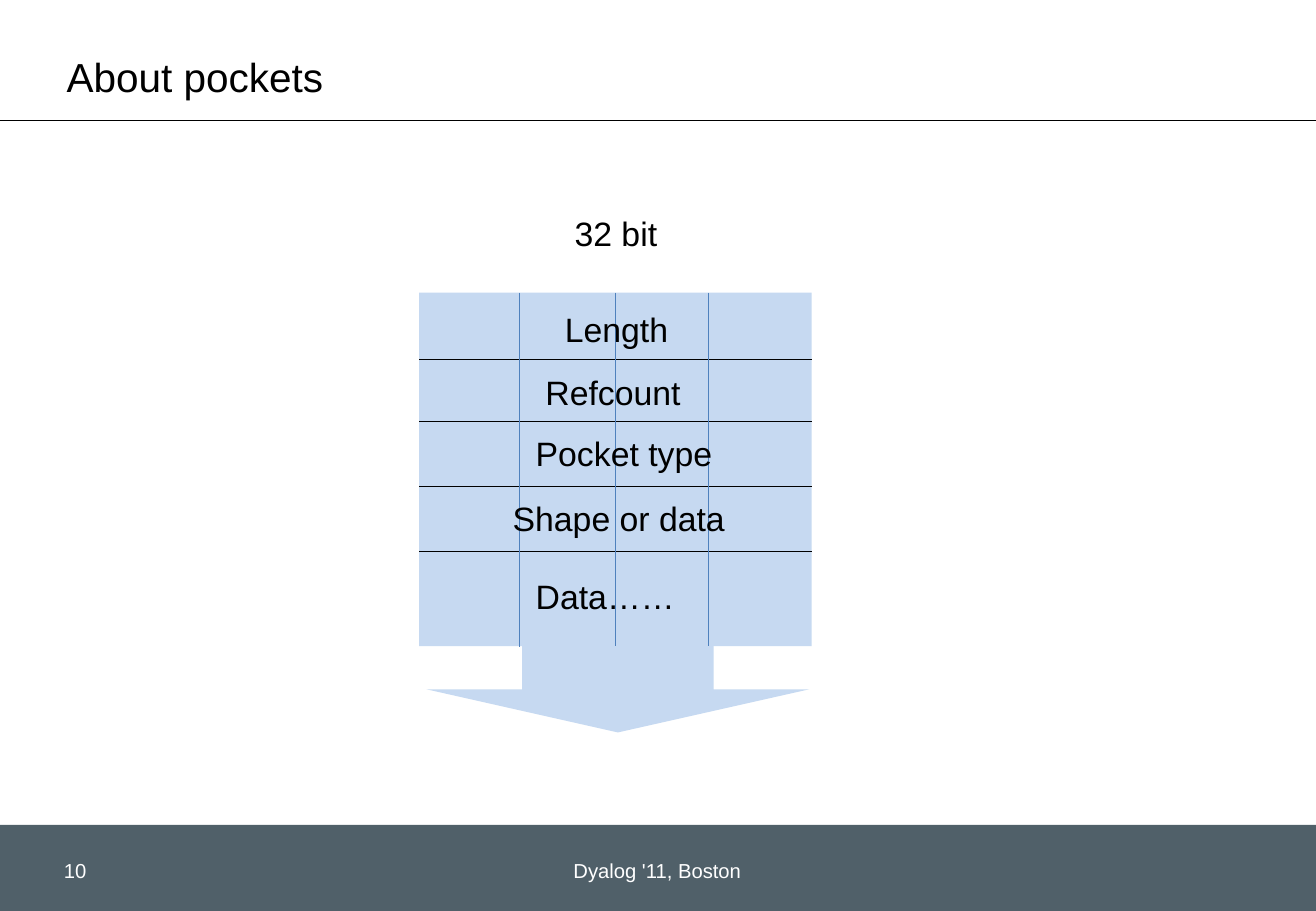
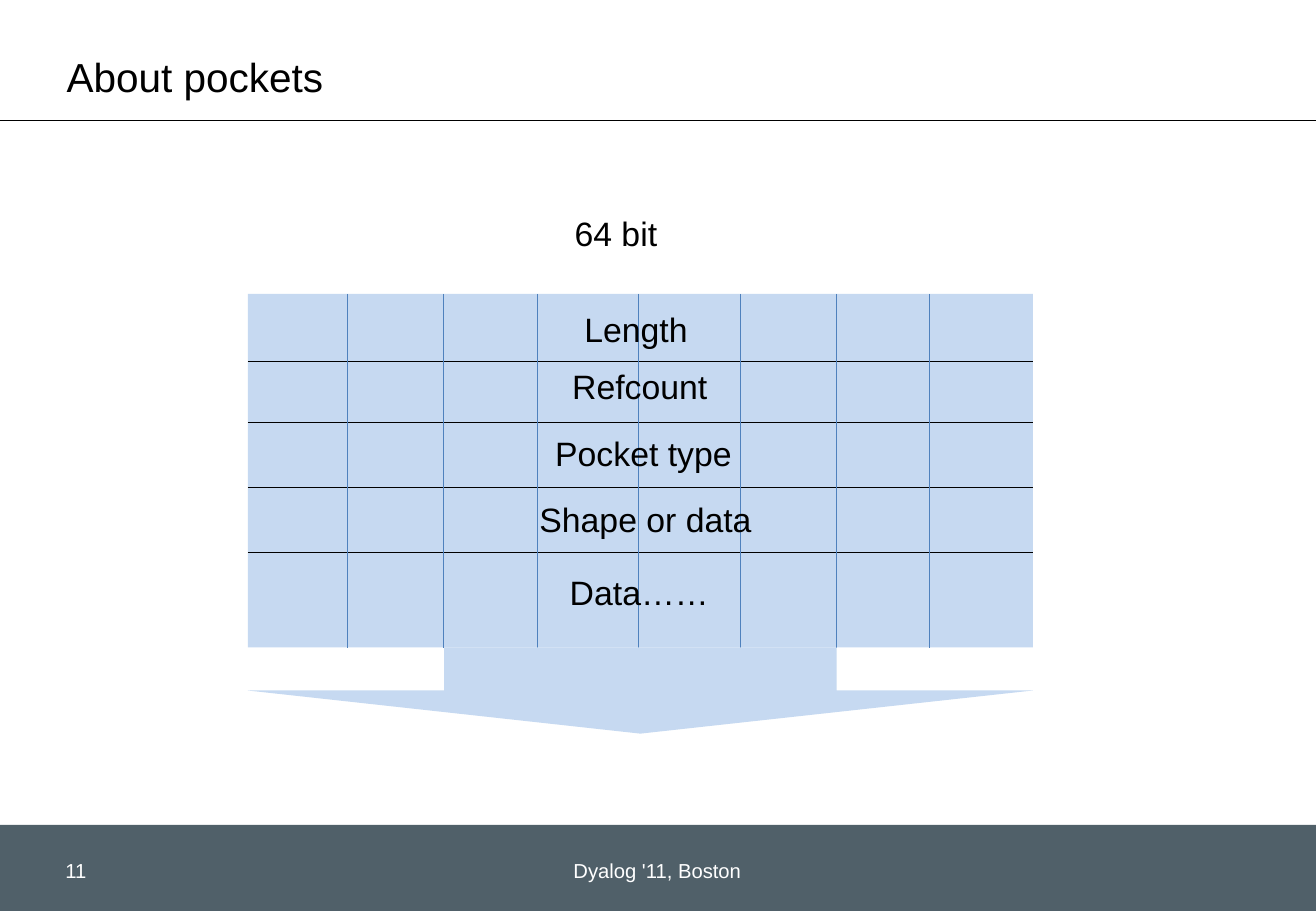
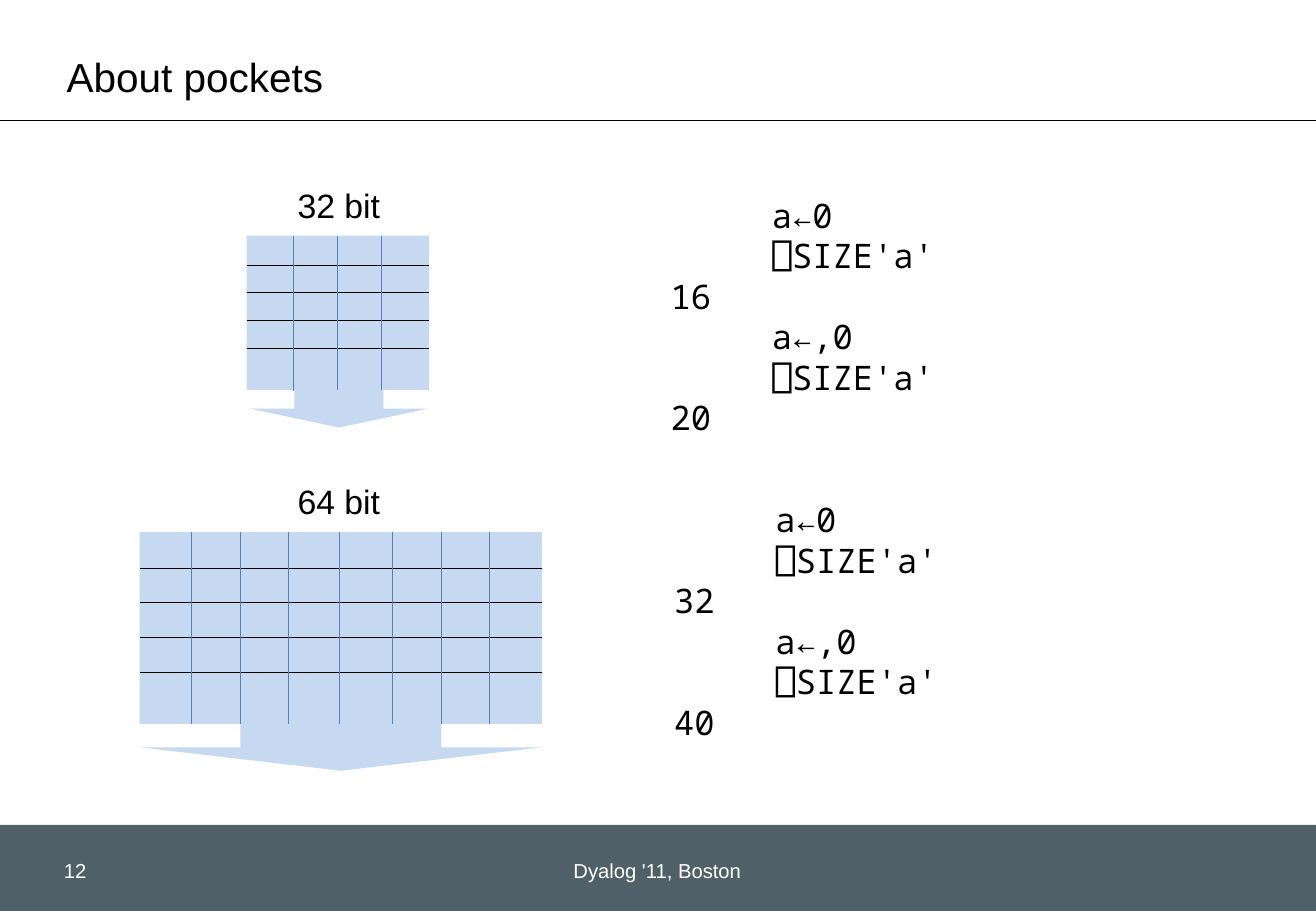
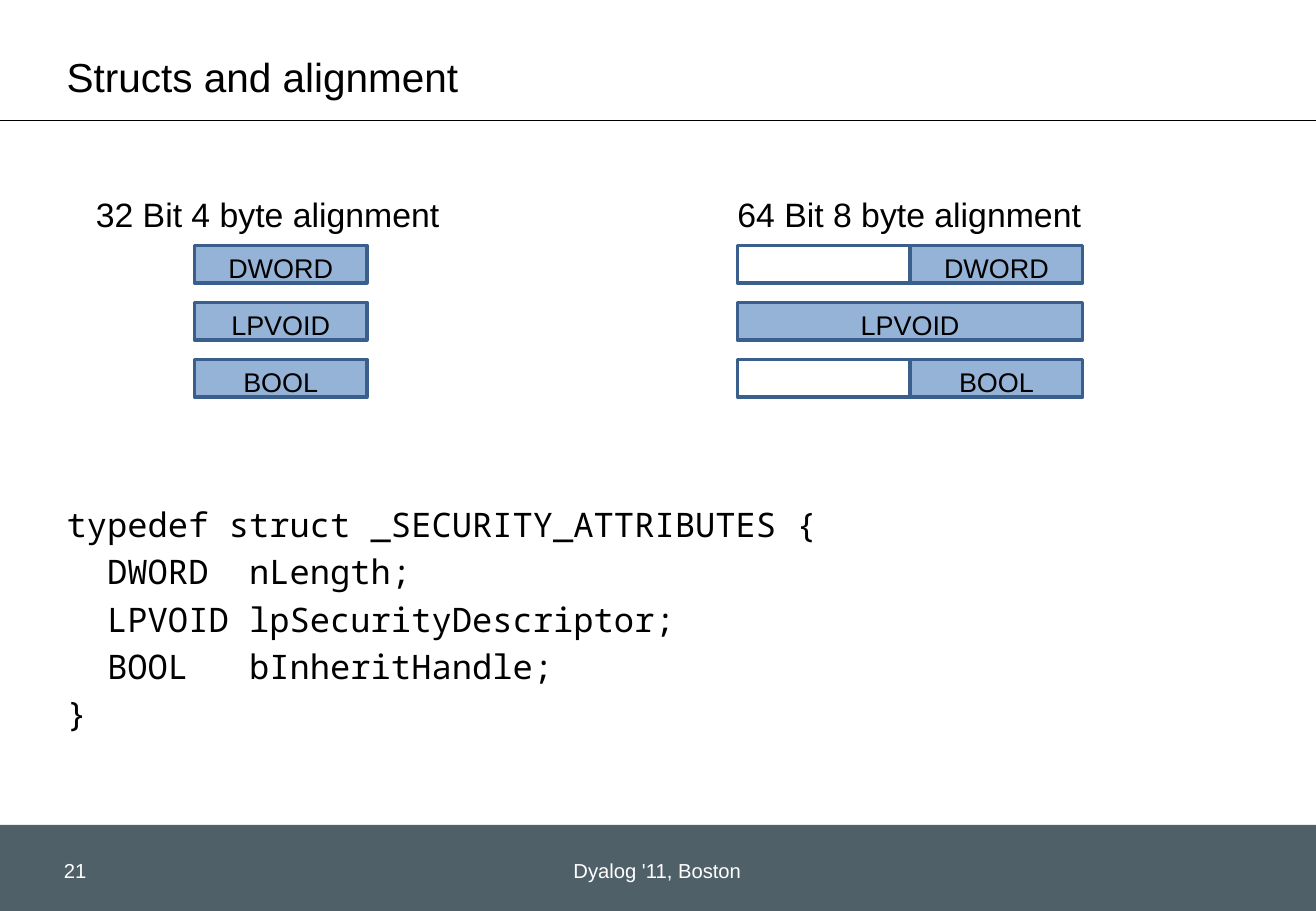
import lxml.etree
import pptx
import pptx.dml.color
import pptx.enum.dml
import pptx.enum.shapes
import pptx.enum.text
import pptx.oxml.ns
import pptx.util

Inches = pptx.util.Inches
Pt = pptx.util.Pt
RGBColor = pptx.dml.color.RGBColor
SHAPES = pptx.enum.shapes.MSO_SHAPE
ALIGN = pptx.enum.text.PP_ALIGN
ANCHOR = pptx.enum.text.MSO_ANCHOR

BLACK = RGBColor(0x00, 0x00, 0x00)
WHITE = RGBColor(0xFF, 0xFF, 0xFF)
SLATE = RGBColor(0x50, 0x60, 0x69)
PALE_BLUE = RGBColor(0xC6, 0xD9, 0xF1)
GRID_BLUE = RGBColor(0x4F, 0x81, 0xBD)
CELL_BLUE = RGBColor(0x95, 0xB3, 0xD7)
CELL_BORDER = RGBColor(0x3A, 0x5F, 0x8C)

SANS = "Arial"
MONO = "Noto Sans Mono"
SLIDE_WIDTH, SLIDE_HEIGHT = 10.83, 7.5
BAND_TOP = 6.79
FOOTER = "Dyalog '11, Boston"

WORD_WIDTH, POCKET_HEIGHT, ARROW_HEIGHT = 3.23, 2.91, 0.71
ROW_LINES = (0.55, 1.06, 1.59, 2.13)
BYTE_LINES = (0.82, 1.61, 2.38)
WORD_LINE = 3.21
ARROW_INSETS = {1: (0.06, 0.02), 2: (0, 0)}

POCKET_SLIDES = [
    {
        "number": 10,
        "pockets": [{"words": 1, "box": (3.45, 2.41, 3.23, 2.91)}],
        "labels": [
            ("32 bit", 4.63, 1.7),
            ("Length", 4.55, 2.49),
            ("Refcount", 4.39, 3.01),
            ("Pocket type", 4.31, 3.51),
            ("Shape or data", 4.12, 4.05),
            ("Data……", 4.31, 4.69),
        ],
        "sessions": [],
    },
    {
        "number": 11,
        "pockets": [{"words": 2, "box": (2.04, 2.42, 6.46, 2.91)}],
        "labels": [
            ("64 bit", 4.63, 1.7),
            ("Length", 4.71, 2.49),
            ("Refcount", 4.61, 2.96),
            ("Pocket type", 4.47, 3.51),
            ("Shape or data", 4.34, 4.06),
            ("Data……", 4.59, 4.66),
        ],
        "sessions": [],
    },
    {
        "number": 12,
        "pockets": [
            {"words": 1, "box": (2.03, 1.94, 1.5, 1.27)},
            {"words": 2, "box": (1.15, 4.38, 3.31, 1.58)},
        ],
        "labels": [("32 bit", 2.35, 1.47), ("64 bit", 2.35, 3.91)],
        "sessions": [(5.42, 1.55, 16, 20), (5.45, 4.06, 32, 40)],
    },
]

SESSION = """     a←0
     ⎕SIZE'a'
{}
     a←,0
     ⎕SIZE'a'
{}"""

STRUCT_CODE = """typedef struct _SECURITY_ATTRIBUTES {
  DWORD  nLength;
  LPVOID lpSecurityDescriptor;
  BOOL   bInheritHandle;
}"""

CELL_WIDTH, CELL_HEIGHT = 1.42, 0.31
CELL_TOP, CELL_PITCH = 2.02, 0.47
ALIGNMENTS = [
    ("32 Bit 4 byte alignment", 0.69, 1.6, [[("DWORD", 1)], [("LPVOID", 1)], [("BOOL", 1)]]),
    ("64 Bit 8 byte alignment", 5.97, 6.07,
     [[("", 1), ("DWORD", 1)], [("LPVOID", 2)], [("", 1), ("BOOL", 1)]]),
]


def write_text(shape, text, size=20, font=SANS, color=BLACK, align=ALIGN.LEFT,
               anchor=ANCHOR.TOP, bottom=0.05, space_before=0):
    frame = shape.text_frame
    frame.word_wrap = True
    frame.vertical_anchor = anchor
    frame.margin_bottom = Inches(bottom)
    for index, line in enumerate(text.split("\n")):
        paragraph = frame.add_paragraph() if index else frame.paragraphs[0]
        paragraph.alignment = align
        if index and space_before:
            paragraph.space_before = Pt(space_before)
        run = paragraph.add_run()
        run.text = line
        run.font.size = Pt(size)
        run.font.name = font
        run.font.color.rgb = color


def add_text(slide, box, text, **text_format):
    write_text(slide.shapes.add_textbox(*map(Inches, box)), text, **text_format)


def add_block(slide, kind, box, fill=None, border=None):
    shape = slide.shapes.add_shape(kind, *map(Inches, box))
    shape.shadow.inherit = False
    if fill is None:
        shape.fill.background()
    else:
        shape.fill.solid()
        shape.fill.fore_color.rgb = fill
    if border is None:
        shape.line.fill.background()
    else:
        shape.line.color.rgb = border
        shape.line.width = Pt(2)
    return shape


def add_line(slide, start, end, color, width, dash=None):
    connector = slide.shapes.add_connector(
        pptx.enum.shapes.MSO_CONNECTOR.STRAIGHT, *map(Inches, start + end))
    connector.line.color.rgb = color
    connector.line.width = Pt(width)
    if dash is not None:
        connector.line.dash_style = dash
    properties = connector._element.spPr
    lxml.etree.SubElement(properties, pptx.oxml.ns.qn("a:effectLst"))


def add_base_slide(presentation, title, number):
    slide = presentation.slides.add_slide(presentation.slide_layouts[6])
    add_block(slide, SHAPES.RECTANGLE,
              (0, BAND_TOP, SLIDE_WIDTH, SLIDE_HEIGHT - BAND_TOP), SLATE)
    add_line(slide, (0, 0.99), (SLIDE_WIDTH, 0.99), BLACK, 0.75)
    add_text(slide, (0.45, 0.38, 9.76, 0.53), title, size=24,
             anchor=ANCHOR.BOTTOM, bottom=0.08)
    add_text(slide, (0.1, 7.02, 0.71, 0.22), str(number), size=12, color=WHITE,
             align=ALIGN.RIGHT)
    add_text(slide, (3.52, 7.02, 3.78, 0.35), FOOTER, size=12, color=WHITE,
             align=ALIGN.CENTER)
    return slide


def add_pocket(slide, words, box):
    left, top, width, height = box
    right, bottom = left + width, top + height
    scale_x = width / (words * WORD_WIDTH)
    scale_y = height / POCKET_HEIGHT
    add_block(slide, SHAPES.RECTANGLE, box, PALE_BLUE)
    for offset in ROW_LINES:
        y = top + offset * scale_y
        add_line(slide, (left, y), (right, y), BLACK, 0.25)
    columns = [word * WORD_WIDTH + offset for word in range(words) for offset in BYTE_LINES]
    columns += [WORD_LINE] * (words - 1)
    for offset in columns:
        x = left + offset * scale_x
        add_line(slide, (x, top), (x, bottom), GRID_BLUE, 0.25,
                 pptx.enum.dml.MSO_LINE.ROUND_DOT)
    inset_left, inset_right = (inset * scale_x for inset in ARROW_INSETS[words])
    add_block(slide, SHAPES.DOWN_ARROW,
              (left + inset_left, bottom, width - inset_left - inset_right,
               ARROW_HEIGHT * scale_y), PALE_BLUE)


def add_pocket_slide(presentation, content):
    slide = add_base_slide(presentation, "About pockets", content["number"])
    for pocket in content["pockets"]:
        add_pocket(slide, **pocket)
    for label, left, top in content["labels"]:
        add_text(slide, (left, top, 2.28, 0.44), label)
    for left, top, scalar_size, vector_size in content["sessions"]:
        add_text(slide, (left, top, 3.23, 2.12),
                 SESSION.format(scalar_size, vector_size), font=MONO)


def add_struct_slide(presentation):
    slide = add_base_slide(presentation, "Structs and alignment", 21)
    for heading, heading_left, cells_left, rows in ALIGNMENTS:
        add_text(slide, (heading_left, 1.55, 3.54, 0.44), heading)
        for index, row in enumerate(rows):
            left = cells_left
            for name, span in row:
                width = span * CELL_WIDTH
                cell = add_block(
                    slide, SHAPES.RECTANGLE,
                    (left, CELL_TOP + index * CELL_PITCH, width, CELL_HEIGHT),
                    CELL_BLUE if name else None, CELL_BORDER)
                if name:
                    write_text(cell, name, size=16, align=ALIGN.CENTER, bottom=0)
                left += width
    add_text(slide, (0.45, 4.1, 9.92, 2.4), STRUCT_CODE, font=MONO, space_before=4)


def main():
    presentation = pptx.Presentation()
    presentation.slide_width = Inches(SLIDE_WIDTH)
    presentation.slide_height = Inches(SLIDE_HEIGHT)
    for content in POCKET_SLIDES:
        add_pocket_slide(presentation, content)
    add_struct_slide(presentation)
    presentation.save("out.pptx")


if __name__ == "__main__":
    main()
